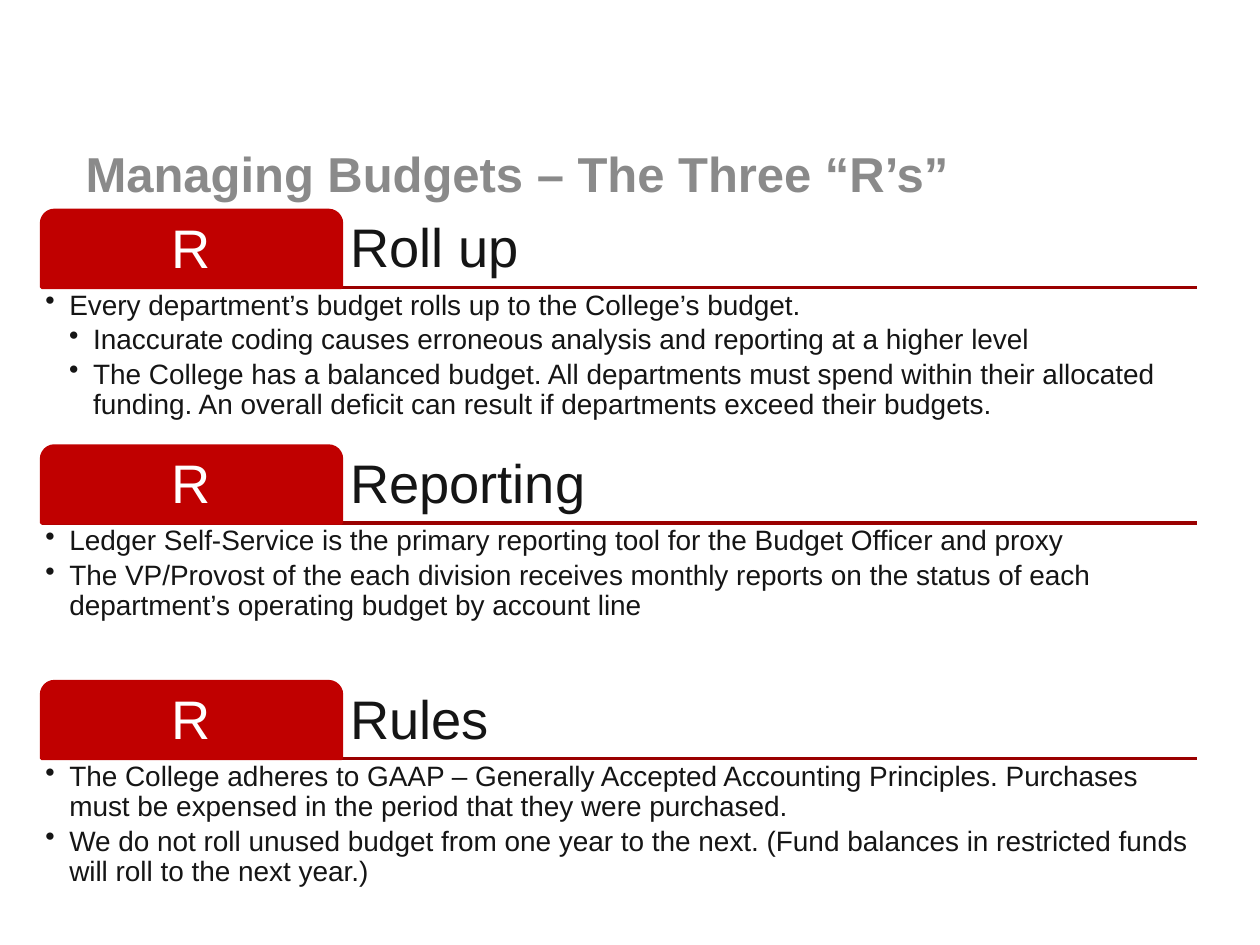
import pptx
import pptx.util
import pptx.dml.color
import pptx.enum.shapes
import pptx.enum.text
import lxml.etree
from pptx.util import Inches

ALIGN = pptx.enum.text.PP_ALIGN
ANCHOR = pptx.enum.text.MSO_ANCHOR
SHAPE = pptx.enum.shapes.MSO_SHAPE
DRAWING = "{http://schemas.openxmlformats.org/drawingml/2006/main}"


def color(hex_string):
    return pptx.dml.color.RGBColor.from_string(hex_string)


def format_text(shape, paragraphs, size, hex_string, inset, anchor, align=ALIGN.LEFT, bullets=False):
    frame = shape.text_frame
    frame.word_wrap = True
    frame.vertical_anchor = anchor
    frame.margin_left = frame.margin_right = Inches(inset)
    frame.margin_top = frame.margin_bottom = Inches(inset)
    for index, (level, text) in enumerate(paragraphs):
        paragraph = frame.add_paragraph() if index else frame.paragraphs[0]
        paragraph.text = text
        paragraph.alignment = align
        paragraph.line_spacing = 0.9
        if bullets:
            paragraph.level = level
            paragraph.space_after = pptx.util.Pt(2.4)
            properties = paragraph._p.get_or_add_pPr()
            properties.set("marL", str(Inches(0.19 * level)))
            properties.set("indent", str(Inches(-0.19)))
            lxml.etree.SubElement(properties, DRAWING + "buChar", char="•")
        paragraph.font.name = "Arial"
        paragraph.font.size = pptx.util.Pt(size)
        paragraph.font.color.rgb = color(hex_string)


presentation = pptx.Presentation()
presentation.slide_width = Inches(10)
presentation.slide_height = Inches(7.5)
slide = presentation.slides.add_slide(presentation.slide_layouts[5])

title = slide.shapes.title
title.left, title.top = Inches(0.58), Inches(1.08)
title.width, title.height = Inches(8.92), Inches(0.58)
title.text_frame.vertical_anchor = ANCHOR.MIDDLE
paragraph = title.text_frame.paragraphs[0]
paragraph.text = "Managing Budgets – The Three “R’s”"
paragraph.alignment = ALIGN.LEFT
paragraph.font.name = "Arial"
paragraph.font.size = pptx.util.Pt(28)
paragraph.font.bold = True
paragraph.font.color.rgb = color("8A8A8A")

sections = [
    ("Roll up", [
        (1, "Every department’s budget rolls up to the College’s budget."),
        (2, "Inaccurate coding causes erroneous analysis and reporting at a higher level"),
        (2, "The College has a balanced budget. All departments must spend within their allocated "
            "funding. An overall deficit can result if departments exceed their budgets."),
    ]),
    ("Reporting", [
        (1, "Ledger Self-Service is the primary reporting tool for the Budget Officer and proxy"),
        (1, "The VP/Provost of the each division receives monthly reports on the status of each "
            "department’s operating budget by account line"),
    ]),
    ("Rules", [
        (1, "The College adheres to GAAP – Generally Accepted Accounting Principles. Purchases "
            "must be expensed in the period that they were purchased."),
        (1, "We do not roll unused budget from one year to the next. (Fund balances in restricted "
            "funds will roll to the next year.)"),
    ]),
]

left, right = 0.33, 9.5
tab_width, tab_height = 2.38, 0.61
for index, (heading, points) in enumerate(sections):
    top = 1.67 + 1.87 * index
    bottom = top + tab_height

    rule = slide.shapes.add_connector(
        pptx.enum.shapes.MSO_CONNECTOR.STRAIGHT,
        Inches(left), Inches(bottom), Inches(right), Inches(bottom))
    rule.line.color.rgb = color("9A0000")
    rule.line.width = pptx.util.Pt(2)
    lxml.etree.SubElement(rule._element.spPr, DRAWING + "effectLst")

    heading_box = slide.shapes.add_textbox(
        Inches(2.72), Inches(top), Inches(6.78), Inches(tab_height))
    format_text(heading_box, [(0, heading)], 31, "151515", 0.06, ANCHOR.BOTTOM)

    tab = slide.shapes.add_shape(
        SHAPE.ROUND_2_SAME_RECTANGLE,
        Inches(left), Inches(top), Inches(tab_width), Inches(tab_height))
    tab.shadow.inherit = False
    tab.adjustments[0] = 0.167
    tab.adjustments[1] = 0
    tab.fill.solid()
    tab.fill.fore_color.rgb = color("C00000")
    tab.line.color.rgb = color("C00000")
    tab.line.width = pptx.util.Pt(2)
    format_text(tab, [(0, "R")], 31, "FFFFFF", 0.06, ANCHOR.MIDDLE, ALIGN.CENTER)

    points_box = slide.shapes.add_textbox(
        Inches(left), Inches(bottom), Inches(right - left), Inches(1.23))
    format_text(points_box, points, 16, "151515", 0.03, ANCHOR.TOP, bullets=True)

presentation.save("out.pptx")
